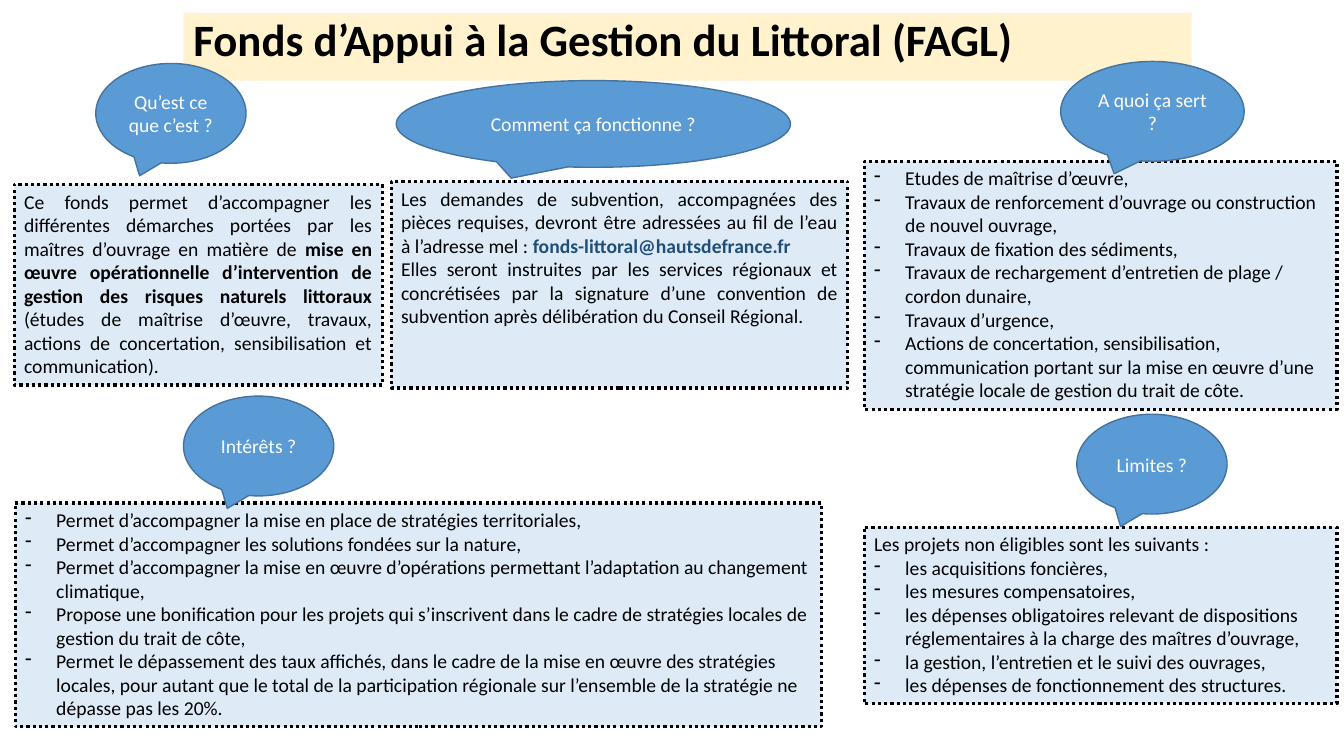
import pptx
import pptx.util
import pptx.dml.color
import pptx.enum.dml
import pptx.enum.shapes
import pptx.enum.text
import pptx.oxml
import pptx.oxml.ns

Inches = pptx.util.Inches
SHAPES = pptx.enum.shapes.MSO_SHAPE
ALIGN = pptx.enum.text.PP_ALIGN
ANCHOR = pptx.enum.text.MSO_ANCHOR

INK, WHITE = "000000", "FFFFFF"
BODY = {"name": "Calibri", "size": pptx.util.Pt(14), "bold": False}
HEADING = {**BODY, "size": pptx.util.Pt(32), "bold": True}
STRONG = {**BODY, "bold": True}
HANGING = Inches(0.31)

FUND = [
    ("Ce fonds permet d’accompagner les différentes démarches portées par les maîtres d’ouvrage "
     "en matière de ", BODY, INK),
    ("mise en œuvre opérationnelle d’intervention de gestion des risques naturels littoraux ",
     STRONG, INK),
    ("(études de maîtrise d’œuvre, travaux, actions de concertation, sensibilisation et "
     "communication).", BODY, INK),
]
REQUEST = [
    ("Les demandes de subvention, accompagnées des pièces requises, devront être adressées "
     "au fil de l’eau à l’adresse mel : ", BODY, INK),
    ("fonds-littoral@hautsdefrance.fr", STRONG, "1F4E79"),
]
REVIEW = [
    ("Elles seront instruites par les services régionaux et concrétisées par la signature d’une "
     "convention de subvention après délibération du Conseil Régional.", BODY, INK),
]
USES = [
    "Etudes de maîtrise d’œuvre,",
    "Travaux de renforcement d’ouvrage ou construction de nouvel ouvrage,",
    "Travaux de fixation des sédiments,",
    "Travaux de rechargement d’entretien de plage / cordon dunaire,",
    "Travaux d’urgence,",
    "Actions de concertation, sensibilisation, communication portant sur la mise en œuvre d’une "
    "stratégie locale de gestion du trait de côte.",
]
BENEFITS = [
    "Permet d’accompagner la mise en place de stratégies territoriales,",
    "Permet d’accompagner les solutions fondées sur la nature,",
    "Permet d’accompagner la mise en œuvre d’opérations permettant l’adaptation au changement "
    "climatique,",
    "Propose une bonification pour les projets qui s’inscrivent dans le cadre de stratégies "
    "locales de gestion du trait de côte,",
    "Permet le dépassement des taux affichés, dans le cadre de la mise en œuvre des stratégies "
    "locales, pour autant que le total de la participation régionale sur l’ensemble de la "
    "stratégie ne dépasse pas les 20%.",
]
LIMITS_INTRO = [("Les projets non éligibles sont les suivants :", BODY, INK)]
LIMITS = [
    "les acquisitions foncières,",
    "les mesures compensatoires,",
    "les dépenses obligatoires relevant de dispositions réglementaires à la charge des maîtres "
    "d’ouvrage,",
    "la gestion, l’entretien et le suivi des ouvrages,",
    "les dépenses de fonctionnement des structures.",
]


def color(value):
    """Turn a hex string into a colour."""
    return pptx.dml.color.RGBColor.from_string(value)


def add_panel(slide, preset, box, fill, outline=None):
    """Add a flat filled shape in box, outlined with (colour, points, dash) if given."""
    panel = slide.shapes.add_shape(preset, *map(Inches, box))
    panel.shadow.inherit = False
    panel.fill.solid()
    panel.fill.fore_color.rgb = color(fill)
    if outline is None:
        panel.line.fill.background()
    else:
        tint, points, dash = outline
        panel.line.color.rgb = color(tint)
        panel.line.width = pptx.util.Pt(points)
        panel.line.dash_style = dash
    return panel


def write(panel, paragraphs, anchor, align, spacing=None):
    """Fill panel with paragraphs; a plain string becomes a dashed list item."""
    frame = panel.text_frame
    frame.word_wrap = True
    frame.vertical_anchor = anchor
    for index, content in enumerate(paragraphs):
        paragraph = frame.add_paragraph() if index else frame.paragraphs[0]
        paragraph.alignment = align
        paragraph.line_spacing = spacing
        if isinstance(content, str):
            add_dash(paragraph)
            content = [(content, BODY, INK)]
        for wording, format_values, tint in content:
            run = paragraph.add_run()
            run.text = wording
            run.font.color.rgb = color(tint)
            for key, value in format_values.items():
                setattr(run.font, key, value)


def add_dash(paragraph):
    """Give a paragraph a hanging indent with a dash."""
    properties = paragraph._p.get_or_add_pPr()
    properties.set("marL", str(HANGING))
    properties.set("indent", str(-HANGING))
    dash = pptx.oxml.parse_xml(f'<a:buChar {pptx.oxml.ns.nsdecls("a")} char="-"/>')
    properties.append(dash)


def add_title(slide, box):
    """Add the title banner."""
    banner = add_panel(slide, SHAPES.RECTANGLE, box, "FFF2CC")
    heading = ("Fonds d’Appui à la Gestion du Littoral (FAGL)", HEADING, INK)
    write(banner, [[heading]], ANCHOR.TOP, ALIGN.LEFT, 0.9)


def add_answer(slide, box, paragraphs, align=ALIGN.LEFT):
    """Add a dotted box that answers a question."""
    dotted = (INK, 2.25, pptx.enum.dml.MSO_LINE.ROUND_DOT)
    answer = add_panel(slide, SHAPES.RECTANGLE, box, "DEEBF7", dotted)
    write(answer, paragraphs, ANCHOR.TOP, align)


def add_question(slide, box, question):
    """Add a speech bubble that asks a question."""
    solid = ("43739E", 1, pptx.enum.dml.MSO_LINE.SOLID)
    bubble = add_panel(slide, SHAPES.OVAL_CALLOUT, box, "5B9BD5", solid)
    write(bubble, [[(question, BODY, WHITE)]], ANCHOR.MIDDLE, ALIGN.CENTER)


def main():
    """Build and save the slide."""
    deck = pptx.Presentation()
    deck.slide_width, deck.slide_height = Inches(13.33), Inches(7.5)
    slide = deck.slides.add_slide(deck.slide_layouts[6])

    add_title(slide, (1.82, 0.13, 10, 0.67))

    add_answer(slide, (0.14, 1.83, 3.65, 1.99), [FUND], ALIGN.JUSTIFY)
    add_answer(slide, (3.88, 1.8, 4.53, 2.05), [REQUEST, REVIEW], ALIGN.JUSTIFY)
    add_answer(slide, (8.57, 1.6, 4.69, 2.46), USES)
    add_answer(slide, (0.15, 4.99, 8, 2.22), BENEFITS)
    add_answer(slide, (8.57, 5.23, 4.69, 1.75), [LIMITS_INTRO, *LIMITS])

    add_question(slide, (0.95, 0.63, 1.49, 0.99), "Qu’est ce que c’est ?")
    add_question(slide, (3.93, 0.8, 3.91, 0.86), "Comment ça fonctionne ?")
    add_question(slide, (10.52, 0.61, 1.82, 0.99), "A quoi ça sert ?")
    add_question(slide, (1.82, 3.93, 1.49, 0.99), "Intérêts ?")
    add_question(slide, (10.68, 4.11, 1.49, 0.99), "Limites ?")

    deck.save("out.pptx")


if __name__ == "__main__":
    main()
